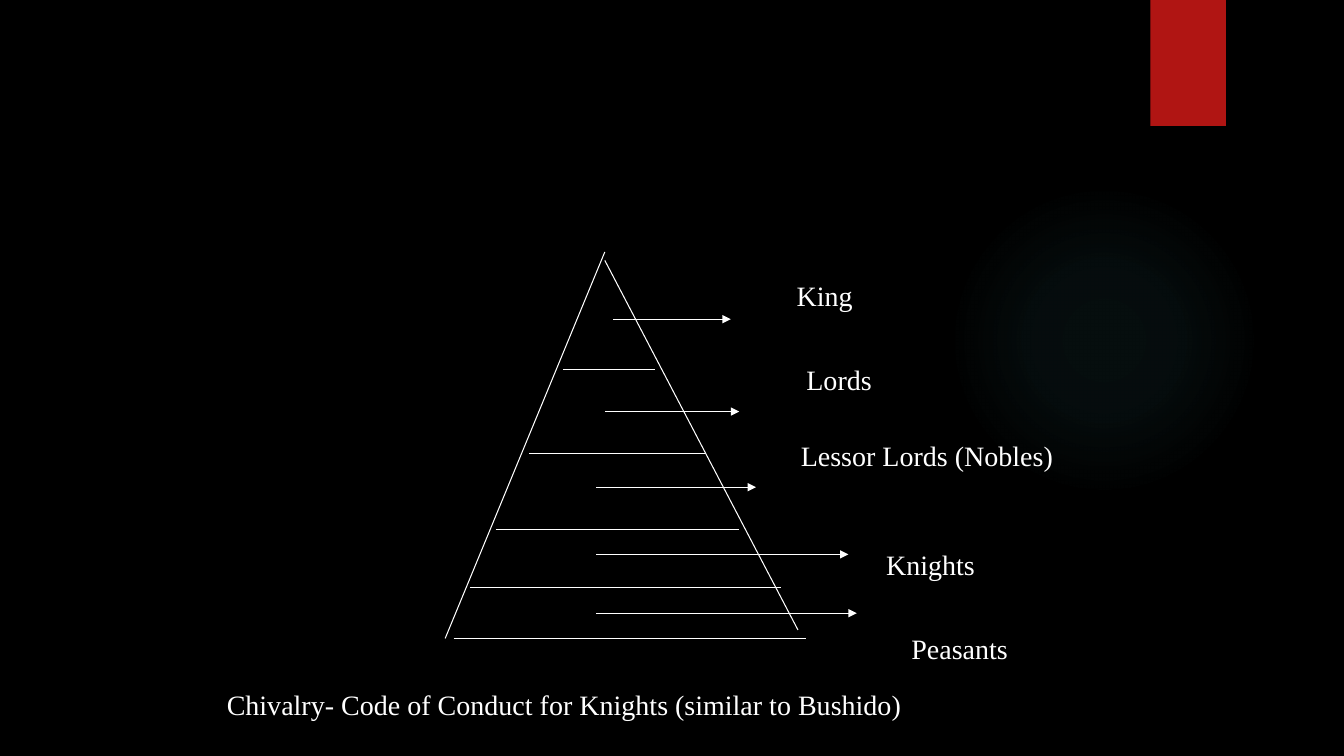
"""Build the feudal pyramid slide."""
from lxml import etree
from pptx import Presentation
from pptx.dml.color import RGBColor as Rgb
from pptx.enum.shapes import MSO_CONNECTOR as Link, MSO_SHAPE as Kind
from pptx.oxml import parse_xml
from pptx.oxml.ns import nsdecls, qn
from pptx.util import Pt

HUES = {"back": "000000", "ink": "FFFFFF", "tab": "B01513", "glow": "50B9C1"}

deck = Presentation()
deck.slide_width, deck.slide_height = Pt(960), Pt(540)
slide = deck.slides.add_slide(deck.slide_layouts[6])
slide.background.fill.solid()
slide.background.fill.fore_color.rgb = Rgb.from_string(HUES["back"])


def draw(x1, y1, x2, y2, arrow=False):
    line = slide.shapes.add_connector(Link.STRAIGHT, Pt(x1), Pt(y1), Pt(x2), Pt(y2))
    line.line.color.rgb = Rgb.from_string(HUES["ink"])
    line.line.width = Pt(0.75)
    props = line._element.spPr
    if arrow:
        etree.SubElement(props.find(qn("a:ln")), qn("a:tailEnd"), type="triangle")
    etree.SubElement(props, qn("a:effectLst"))


def label(text, left, top, wide, high, inset, drop):
    box = slide.shapes.add_textbox(Pt(left), Pt(top), Pt(wide), Pt(high))
    frame = box.text_frame
    frame.word_wrap = True
    frame.margin_left, frame.margin_top = Pt(inset), Pt(drop)
    run = frame.paragraphs[0].add_run()
    run.text = text
    run.font.name = "Times New Roman"
    run.font.size = Pt(20)
    run.font.color.rgb = Rgb.from_string(HUES["ink"])


glow = slide.shapes.add_shape(Kind.OVAL, Pt(677.5), Pt(132), Pt(222), Pt(222))
glow.shadow.inherit = False
glow.line.fill.background()
stops = "".join(
    f'<a:gs pos="{pos * 1000}"><a:srgbClr val="{HUES["glow"]}">'
    f'<a:alpha val="{alpha * 1000}"/></a:srgbClr></a:gs>'
    for pos, alpha in ((0, 7), (36, 6), (69, 0))
)
grad = parse_xml(
    f'<a:gradFill {nsdecls("a")}><a:gsLst>{stops}</a:gsLst><a:path path="circle">'
    '<a:fillToRect l="50000" t="50000" r="50000" b="50000"/></a:path></a:gradFill>'
)
glow._element.spPr.find(qn("a:prstGeom")).addnext(grad)

tab = slide.shapes.add_shape(Kind.RECTANGLE, Pt(821.7), Pt(0), Pt(54), Pt(90))
tab.shadow.inherit = False
tab.fill.solid()
tab.fill.fore_color.rgb = Rgb.from_string(HUES["tab"])
tab.line.fill.background()

draw(432, 180, 318, 456)
draw(432, 186, 570, 450)
for left, right, y in (
    (324, 576, 456), (402, 468, 264), (378, 504, 324), (354, 528, 378), (336, 558, 420),
):
    draw(left, y, right, y)
for left, right, y in (
    (438, 522, 228), (432, 528, 294), (426, 540, 348), (426, 606, 396), (426, 612, 438),
):
    draw(left, y, right, y, arrow=True)

for rank, left, top, wide, inset in (
    ("King", 540, 186, 144, 29),
    ("Lords", 534, 246, 204, 42),
    ("Lessor Lords (Nobles)", 558, 300, 252, 14),
    ("Knights", 612, 378, 180, 21),
    ("Peasants", 630, 438, 162, 21),
):
    label(rank, left, top, wide, 41, inset, 13)
label("Chivalry- Code of Conduct for Knights (similar to Bushido)", 155, 486, 643, 31, 7, 5)

deck.save("out.pptx")
